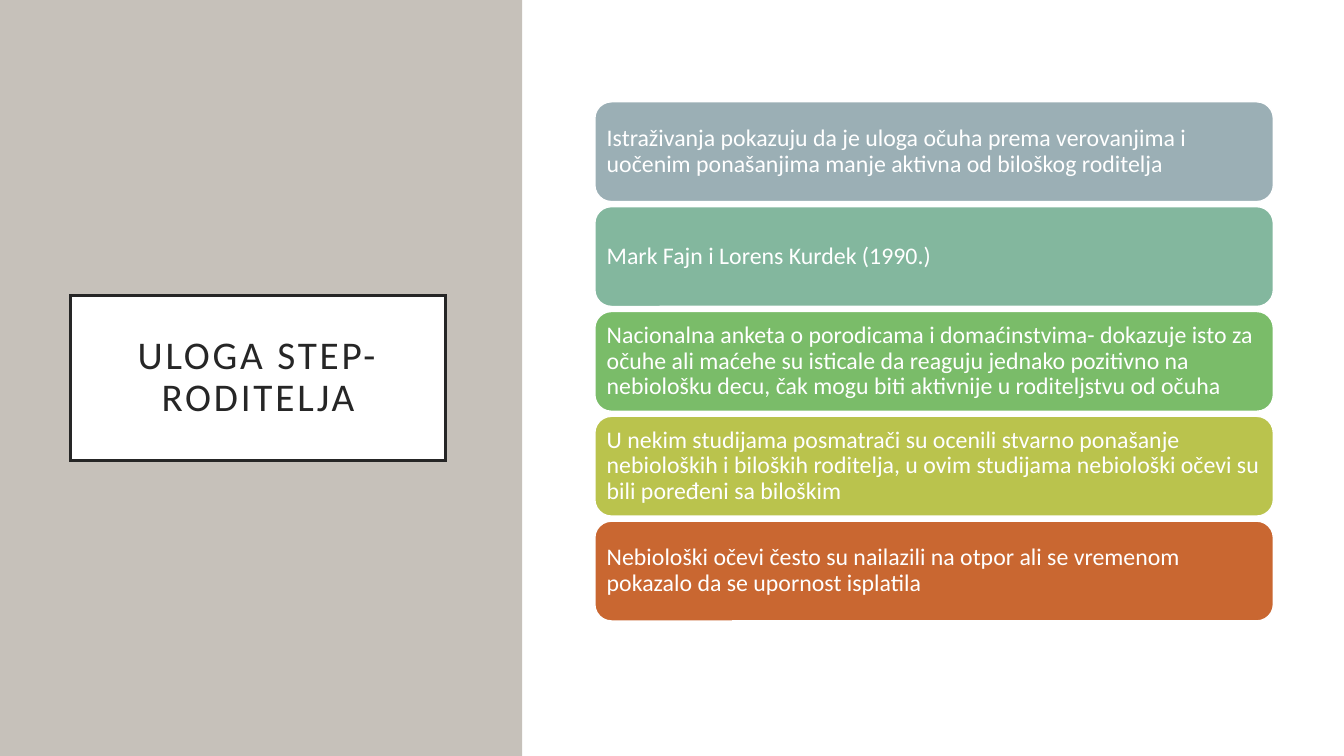
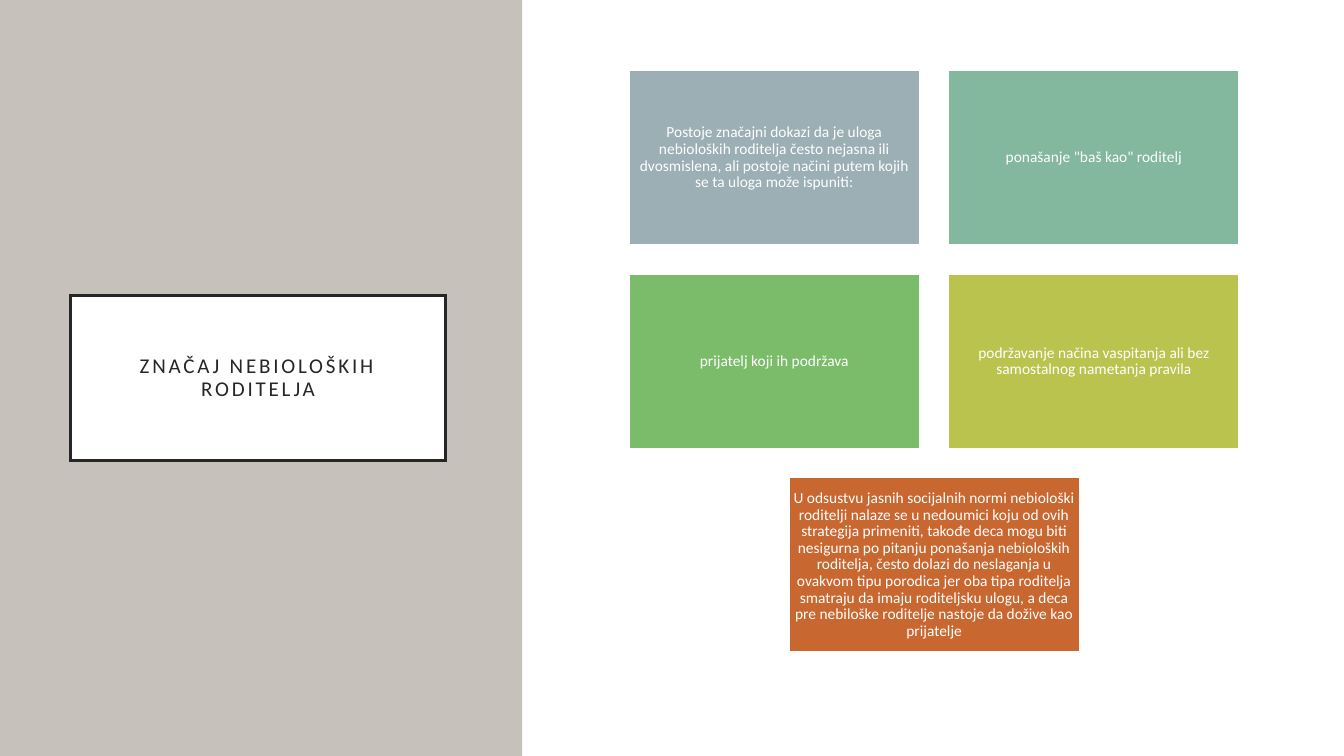
import dataclasses

import lxml.etree
import pptx
import pptx.dml.color
import pptx.enum.shapes
import pptx.enum.text
import pptx.oxml.ns
import pptx.util

Inches = pptx.util.Inches
Pt = pptx.util.Pt
qn = pptx.oxml.ns.qn
Align = pptx.enum.text.PP_ALIGN
Shapes = pptx.enum.shapes.MSO_SHAPE


@dataclasses.dataclass(frozen=True)
class Theme:
    width: float = 13.33
    height: float = 7.5
    font: str = "Calibri"
    panel: str = "C6C1BA"
    ink: str = "262626"
    paper: str = "FFFFFF"
    accents: tuple = ("9BAFB5", "83B79E", "7ABC69", "BAC34D", "C96731")
    long_title_size: int = 15
    title_size: int = 28
    title_spacing: int = 200
    bar_size: int = 17
    tile_size: int = 11
    line_spacing: float = 0.9


@dataclasses.dataclass(frozen=True)
class Grid:
    left: float
    top: float
    cell_width: float
    cell_height: float
    gap: float
    columns: int

    def cells(self, count):
        for index in range(count):
            row, column = divmod(index, self.columns)
            in_row = min(self.columns, count - row * self.columns)
            column += (self.columns - in_row) / 2
            yield (
                self.left + column * (self.cell_width + self.gap),
                self.top + row * (self.cell_height + self.gap),
                self.cell_width,
                self.cell_height,
            )


THEME = Theme()
TITLE_BOX = (0.7, 2.93, 3.72, 1.64)
SIDE_PANEL = (0, 0, 5.18, THEME.height)
CONTENT_PANEL = (5.2, 0, THEME.width - 5.2, THEME.height)
BAR_GRID = Grid(5.9, 1.01, 6.73, 0.99, 0.05, 1)
TILE_GRID = Grid(6.24, 0.7, 2.88, 1.73, 0.29, 2)

BARS = (
    "Istraživanja pokazuju da je uloga očuha prema verovanjima i uočenim "
    "ponašanjima manje aktivna od biloškog roditelja",
    "Mark Fajn i Lorens Kurdek (1990.)",
    "Nacionalna anketa o porodicama i domaćinstvima- dokazuje isto za očuhe "
    "ali maćehe su isticale da reaguju jednako pozitivno na nebiološku decu, "
    "čak mogu biti aktivnije u roditeljstvu od očuha",
    "U nekim studijama posmatrači su ocenili stvarno ponašanje nebioloških i "
    "biloških roditelja, u ovim studijama nebiološki očevi su bili poređeni "
    "sa biloškim",
    "Nebiološki očevi često su nailazili na otpor ali se vremenom pokazalo "
    "da se upornost isplatila",
)
TILES = (
    "Postoje značajni dokazi da je uloga nebioloških roditelja često nejasna "
    "ili dvosmislena, ali postoje načini putem kojih se ta uloga može ispuniti:",
    'ponašanje "baš kao" roditelj',
    "prijatelj koji ih podržava",
    "podržavanje načina vaspitanja ali bez samostalnog nametanja pravila",
    "U odsustvu jasnih socijalnih normi nebiološki roditelji nalaze se u "
    "nedoumici koju od ovih strategija primeniti, takođe deca mogu biti "
    "nesigurna po pitanju ponašanja nebioloških roditelja, često dolazi do "
    "neslaganja u ovakvom tipu porodica jer oba tipa roditelja smatraju da "
    "imaju roditeljsku ulogu, a deca pre nebiloške roditelje nastoje da "
    "dožive kao prijatelje",
)


def color(value):
    return pptx.dml.color.RGBColor.from_string(value)


def apply_format(target, values):
    for name, value in values.items():
        setattr(target, name, value)


def paint(shape, fill, line=None, line_width=1):
    shape.fill.solid()
    shape.fill.fore_color.rgb = color(fill)
    if line is None:
        shape.line.fill.background()
    else:
        shape.line.color.rgb = color(line)
        shape.line.width = Pt(line_width)


def write(shape, text, size, ink, inset, alignment):
    frame = shape.text_frame
    margins = ("margin_left", "margin_top", "margin_right", "margin_bottom")
    apply_format(frame, dict.fromkeys(margins, Inches(inset)))
    apply_format(frame, {
        "word_wrap": True,
        "auto_size": pptx.enum.text.MSO_AUTO_SIZE.NONE,
        "vertical_anchor": pptx.enum.text.MSO_ANCHOR.MIDDLE,
    })
    paragraph = frame.paragraphs[0]
    apply_format(paragraph, {
        "alignment": alignment,
        "line_spacing": THEME.line_spacing,
    })
    run = paragraph.add_run()
    run.text = text
    apply_format(run.font, {"name": THEME.font, "size": Pt(size)})
    run.font.color.rgb = color(ink)


def add_block(slide, kind, box, fill, line=None):
    shape = slide.shapes.add_shape(kind, *map(Inches, box))
    shape.shadow.inherit = False
    paint(shape, fill, line)
    return shape


def add_titled_slide(presentation, text, size):
    slide = presentation.slides.add_slide(presentation.slide_layouts[5])
    title = slide.shapes.title
    names = ("left", "top", "width", "height")
    apply_format(title, dict(zip(names, map(Inches, TITLE_BOX))))
    paint(title, THEME.paper, THEME.ink, 2.5)
    write(title, text, size, THEME.ink, 0.2, Align.CENTER)
    outline = next(title.element.iter(qn("a:ln")))
    lxml.etree.SubElement(outline, qn("a:miter"), lim="800000")
    character_format = next(title.element.iter(qn("a:rPr")))
    character_format.set("spc", str(THEME.title_spacing))
    panel = add_block(slide, Shapes.RECTANGLE, SIDE_PANEL, THEME.panel)
    title.element.addprevious(panel.element)
    add_block(slide, Shapes.RECTANGLE, CONTENT_PANEL, THEME.paper)
    return slide


def add_cards(slide, grid, texts, kind, size, inset, alignment):
    for box, text, fill in zip(grid.cells(len(texts)), texts, THEME.accents):
        card = add_block(slide, kind, box, fill, THEME.paper)
        write(card, text, size, THEME.paper, inset, alignment)


def main():
    presentation = pptx.Presentation()
    presentation.slide_width = Inches(THEME.width)
    presentation.slide_height = Inches(THEME.height)

    roles = add_titled_slide(
        presentation, "ULOGA STEP-RODITELJA", THEME.title_size)
    add_cards(roles, BAR_GRID, BARS, Shapes.ROUNDED_RECTANGLE,
              THEME.bar_size, 0.07, Align.LEFT)

    importance = add_titled_slide(
        presentation, "ZNAČAJ NEBIOLOŠKIH RODITELJA", THEME.long_title_size)
    add_cards(importance, TILE_GRID, TILES, Shapes.RECTANGLE,
              THEME.tile_size, 0.04, Align.CENTER)

    presentation.save("out.pptx")


if __name__ == "__main__":
    main()
